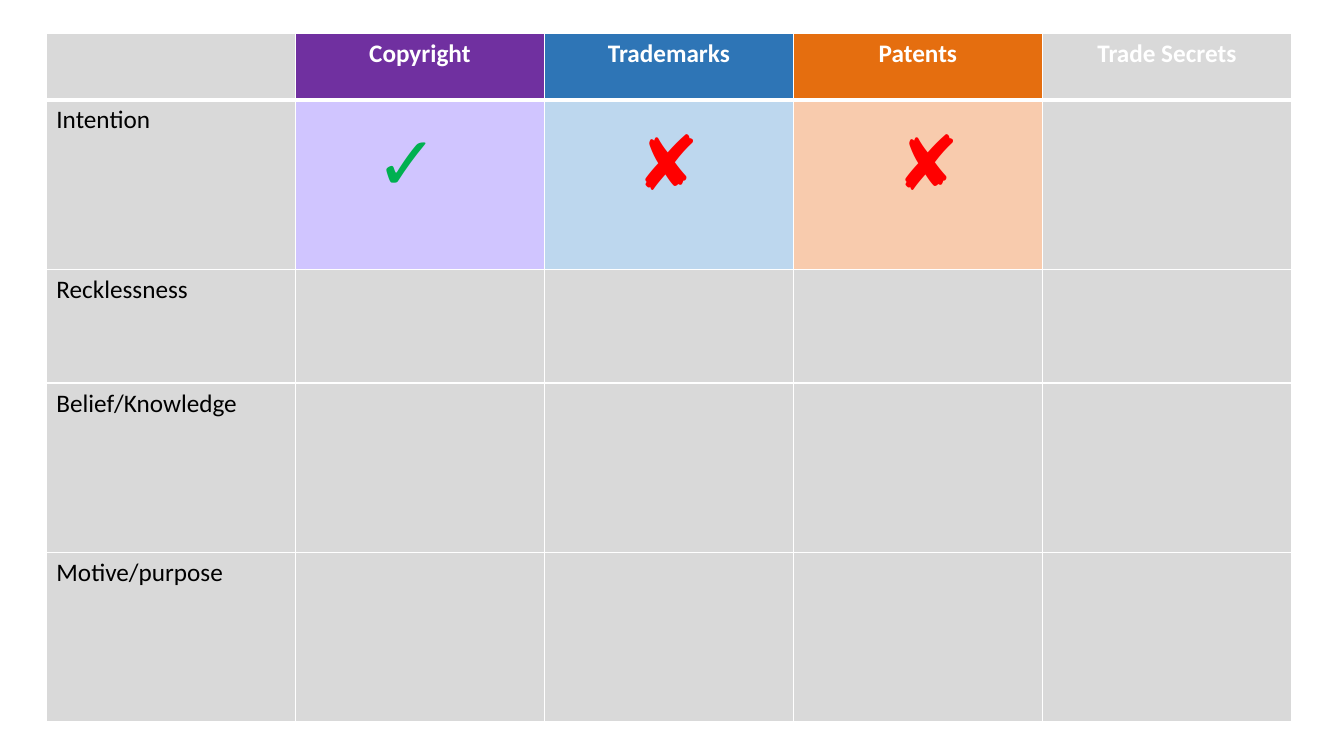
from lxml.etree import SubElement
from pptx import Presentation
from pptx.dml.color import RGBColor
from pptx.enum.text import MSO_AUTO_SIZE, PP_ALIGN
from pptx.oxml.ns import qn
from pptx.util import Inches, Pt

COLORS = {
    "white": "FFFFFF", "black": "000000", "gray": "D9D9D9",
    "purple": "7030A0", "blue": "2E75B6", "orange": "E56E0F",
    "lilac": "D0C5FF", "sky": "BDD7EE", "peach": "F8CBAD",
    "green": "00B050", "red": "FF0000",
}
HEADERS = [("", "gray"), ("Copyright", "purple"), ("Trademarks", "blue"),
           ("Patents", "orange"), ("Trade Secrets", "gray")]
MENTAL_STATES = ["Intention", "Recklessness", "Belief/Knowledge", "Motive/purpose"]
INTENTION_FILLS = ["gray", "lilac", "sky", "peach", "gray"]
COLUMN_WIDTH = 2.47
ROW_HEIGHTS = [0.66, 1.68, 1.13, 1.68, 1.68]
# Symbol, colour, left, width
MARKS = [("✓", "green", 3.63, 0.77), ("✘", "red", 6.15, 0.96), ("✘", "red", 8.71, 0.99)]


class SlideBuilder:
    """Holds the text style and the current slide."""

    font_name = "Calibri"

    def __init__(self, slide):
        self.slide = slide

    def color(self, name):
        return RGBColor.from_string(COLORS[name])

    def set_text(self, text_frame, text, size, color, bold=False, align=PP_ALIGN.LEFT):
        paragraph = text_frame.paragraphs[0]
        paragraph.text = text
        paragraph.alignment = align
        font = paragraph.font
        font.name, font.size, font.bold = self.font_name, Pt(size), bold
        font.color.rgb = self.color(color)

    def border(self, cell, bottom):
        properties = cell._tc.get_or_add_tcPr()
        for side, width in (("L", 1), ("R", 1), ("T", 1), ("B", bottom)):
            line = SubElement(properties, qn(f"a:ln{side}"), w=str(Pt(width)))
            fill = SubElement(line, qn("a:solidFill"))
            SubElement(fill, qn("a:srgbClr"), val=COLORS["white"])

    def cell(self, cell, text, fill, header=False):
        self.border(cell, 3 if header else 1)
        cell.fill.solid()
        cell.fill.fore_color.rgb = self.color(fill)
        self.set_text(cell.text_frame, text, 18, "white" if header else "black",
                      header, PP_ALIGN.CENTER if header else PP_ALIGN.LEFT)

    def table(self, left, top, column_count, column_width, row_heights):
        table = self.slide.shapes.add_table(
            len(row_heights), column_count, Inches(left), Inches(top),
            Inches(column_count * column_width), Inches(sum(row_heights))).table
        table.horz_banding = False
        for column in table.columns:
            column.width = Inches(column_width)
        for row, height in zip(table.rows, row_heights):
            row.height = Inches(height)
        return table

    def mark(self, symbol, color, left, width):
        shape = self.slide.shapes.add_textbox(
            Inches(left), Inches(1.09), Inches(width), Inches(1.01))
        shape.text_frame.word_wrap = False
        shape.text_frame.auto_size = MSO_AUTO_SIZE.SHAPE_TO_FIT_TEXT
        self.set_text(shape.text_frame, symbol, 54, color, True, PP_ALIGN.CENTER)


def main():
    presentation = Presentation()
    presentation.slide_width, presentation.slide_height = Inches(13.33), Inches(7.5)
    blank_layout = presentation.slide_layouts[6]
    builder = SlideBuilder(presentation.slides.add_slide(blank_layout))

    # Comparison table: header row, then one row per mental state
    table = builder.table(0.46, 0.33, len(HEADERS), COLUMN_WIDTH, ROW_HEIGHTS)
    for column, (title, fill) in enumerate(HEADERS):
        builder.cell(table.cell(0, column), title, fill, header=True)
        for row, state in enumerate(MENTAL_STATES, start=1):
            builder.cell(table.cell(row, column), state if column == 0 else "",
                         INTENTION_FILLS[column] if row == 1 else "gray")

    # Check and cross marks in the intention row
    for mark in MARKS:
        builder.mark(*mark)

    presentation.save("out.pptx")


if __name__ == "__main__":
    main()
